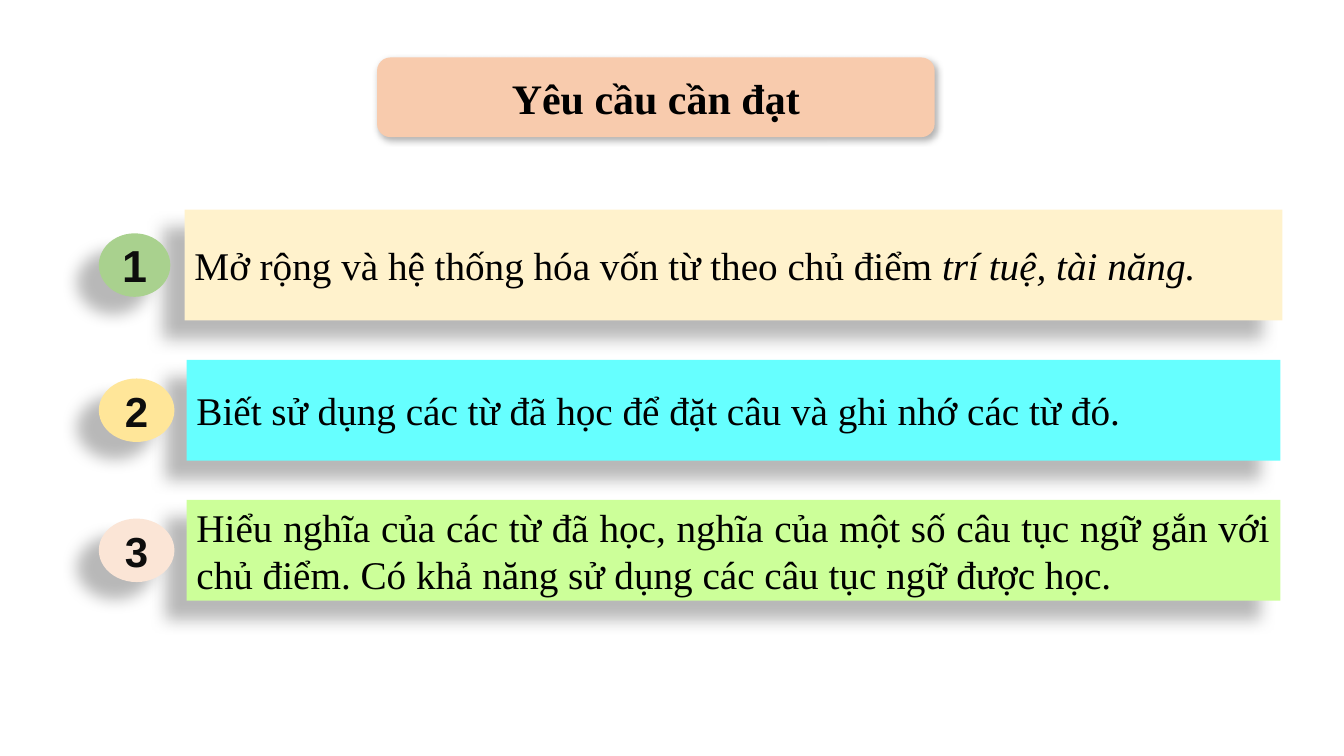
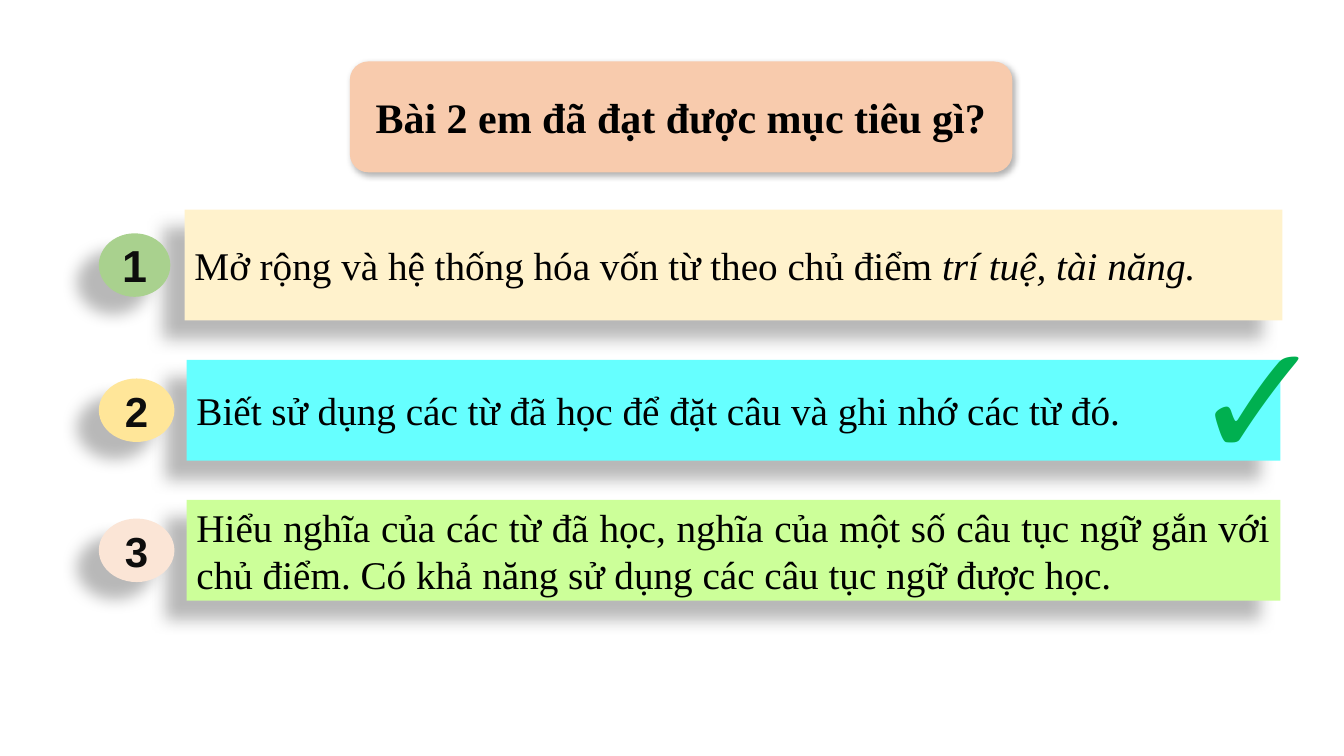
import pptx
import pptx.util
import pptx.dml.color
import pptx.enum.shapes
import pptx.enum.text
import pptx.oxml
import pptx.oxml.ns

Inches = pptx.util.Inches
SHAPES = pptx.enum.shapes.MSO_SHAPE
ALIGN = pptx.enum.text.PP_ALIGN
ANCHOR = pptx.enum.text.MSO_ANCHOR

# Content: each title with its band (left, top, width, height)
SLIDES = [
    {"title": "Yêu cầu cần đạt", "band": (3.74, 0.57, 5.53, 0.79), "checked": False},
    {"title": "Bài 2 em đã đạt được mục tiêu gì?", "band": (3.47, 0.61, 6.57, 1.1), "checked": True},
]
# Goals: text runs as (text, italic)
GOALS = [
    {"runs": [("Mở rộng và hệ thống hóa vốn từ theo chủ điểm ", False),
              ("trí tuệ, tài năng.", True)],
     "bar": "FFF2CC", "badge": "A9D18E", "size": (10.89, 1.1),
     "badge_width": 0.71, "number_size": 32},
    {"runs": [("Biết sử dụng các từ đã học để đặt câu và ghi nhớ các từ đó.", False)],
     "bar": "66FFFF", "badge": "FFE699", "size": (10.85, 1.0),
     "badge_width": 0.75, "number_size": 30},
    {"runs": [("Hiểu nghĩa của các từ đã học, nghĩa của một số câu tục ngữ gắn với "
               "chủ điểm. Có khả năng sử dụng các câu tục ngữ được học.", False)],
     "bar": "CCFF99", "badge": "FBE5D6", "size": (10.85, 1.0),
     "badge_width": 0.75, "number_size": 30},
]

# Shared style
TITLE_FONT = {"name": "Times New Roman", "size": 30, "color": "000000", "bold": True}
GOAL_FONT = {"name": "Times New Roman", "size": 28, "color": "000000", "bold": False}
BADGE_FONT = {"name": "Arial", "size": 30, "color": "0D0D0D", "bold": True}
CHECK_FONT = {"name": "Calibri", "size": 115, "color": "00B050"}
TITLE_FILL = "F8CBAD"
# Shadows: opacity in percent, blur and distance in points, angle in degrees
TITLE_SHADOW = (30, 4.5, 2.6, 53)
GOAL_SHADOW = (28, 11.8, 19.7, 141)
BAR_TOP, BAR_GAP, BAR_CENTER = 2.08, 0.39, 7.275
BADGE_LEFT, BADGE_HEIGHT = 0.98, 0.63
CHECK_BOX = (11.72, 2.9, 1.12, 2.04)


def rgb(value):
    return pptx.dml.color.RGBColor.from_string(value)


def style_font(font, style):
    for name, value in style.items():
        if name == "color":
            font.color.rgb = rgb(value)
        else:
            setattr(font, name, pptx.util.Pt(value) if name == "size" else value)


def add_shadow(shape, opacity, blur, distance, angle):
    shape.shadow.inherit = False
    effects = shape._element.spPr.find(pptx.oxml.ns.qn("a:effectLst"))
    effects.append(pptx.oxml.parse_xml(
        f'<a:outerShdw {pptx.oxml.ns.nsdecls("a")} blurRad="{pptx.util.Pt(blur)}" '
        f'dist="{pptx.util.Pt(distance)}" dir="{angle * 60000}" rotWithShape="0">'
        f'<a:srgbClr val="000000"><a:alpha val="{opacity * 1000}"/></a:srgbClr>'
        '</a:outerShdw>'))


def add_block(shapes, kind, box, fill, shadow):
    shape = shapes.add_shape(kind, *map(Inches, box))
    shape.fill.solid()
    shape.fill.fore_color.rgb = rgb(fill)
    shape.line.fill.background()
    add_shadow(shape, *shadow)
    return shape


def write(shape, runs, style, alignment, anchor=ANCHOR.MIDDLE):
    frame = shape.text_frame
    frame.word_wrap = True
    frame.vertical_anchor = anchor
    paragraph = frame.paragraphs[0]
    paragraph.alignment = alignment
    for text, italic in runs:
        run = paragraph.add_run()
        run.text = text
        style_font(run.font, {**style, "italic": italic})


def add_title(slide, text, box):
    band = add_block(slide.shapes, SHAPES.ROUNDED_RECTANGLE, box, TITLE_FILL, TITLE_SHADOW)
    title = slide.shapes.title
    title._element.addprevious(band._element)  # band goes behind the title
    title.left, title.top, title.width, title.height = map(Inches, box)
    title.text_frame.auto_size = pptx.enum.text.MSO_AUTO_SIZE.NONE
    write(title, [(text, False)], TITLE_FONT, ALIGN.CENTER)


def add_goals(slide):
    top = BAR_TOP
    for number, goal in enumerate(GOALS, start=1):
        width, height = goal["size"]
        group = slide.shapes.add_group_shape()
        bar = add_block(group.shapes, SHAPES.RECTANGLE,
                        (BAR_CENTER - width / 2, top, width, height),
                        goal["bar"], GOAL_SHADOW)
        write(bar, goal["runs"], GOAL_FONT, ALIGN.JUSTIFY)
        badge_top = top + (height - BADGE_HEIGHT) / 2
        badge = add_block(group.shapes, SHAPES.OVAL,
                          (BADGE_LEFT, badge_top, goal["badge_width"], BADGE_HEIGHT),
                          goal["badge"], GOAL_SHADOW)
        write(badge, [(str(number), False)],
              {**BADGE_FONT, "size": goal["number_size"]}, ALIGN.CENTER)
        top += height + BAR_GAP


def main():
    presentation = pptx.Presentation()
    presentation.slide_width = Inches(13.33)
    presentation.slide_height = Inches(7.5)
    for content in SLIDES:
        slide = presentation.slides.add_slide(presentation.slide_layouts[5])
        add_title(slide, content["title"], content["band"])
        add_goals(slide)
        if content["checked"]:
            check = slide.shapes.add_textbox(*map(Inches, CHECK_BOX))
            write(check, [("✓", False)], CHECK_FONT, ALIGN.LEFT, ANCHOR.TOP)
    presentation.save("out.pptx")


if __name__ == "__main__":
    main()
